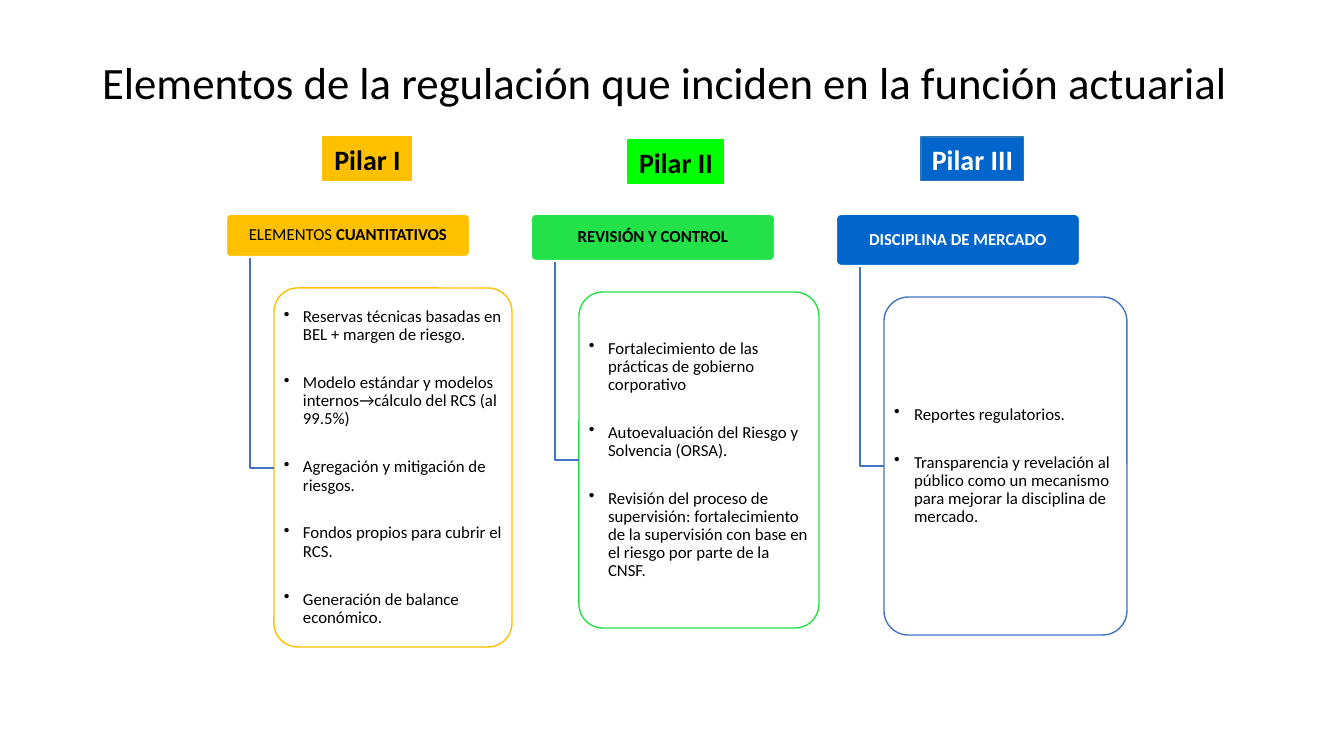
import pptx
import pptx.util
import pptx.dml.color
import pptx.enum.shapes
import pptx.enum.text
from lxml import etree

EMU_PER_PX = 914400 / 100.8
FONT = "Calibri"
SHAPES = pptx.enum.shapes.MSO_SHAPE
ALIGN = pptx.enum.text.PP_ALIGN
MIDDLE = pptx.enum.text.MSO_ANCHOR.MIDDLE


def px(*lengths):
    return [round(length * EMU_PER_PX) for length in lengths]


def color(hex_code):
    return pptx.dml.color.RGBColor.from_string(hex_code)


deck = pptx.Presentation()
deck.slide_width, deck.slide_height = px(1344, 756)
slide = deck.slides.add_slide(deck.slide_layouts[5])

# Title
title = slide.shapes.title
title.left, title.top, title.width, title.height = px(92, 30, 1159, 110)
title.text_frame.text = "Elementos de la regulación que inciden en la función actuarial"
title.text_frame.vertical_anchor = MIDDLE
heading = title.text_frame.paragraphs[0]
heading.alignment = ALIGN.LEFT
heading.line_spacing = 0.9
heading.font.size = pptx.util.Pt(32)
heading.font.name = FONT
heading.font.color.rgb = color("000000")

# The three pillars
pillars = [
    {"tag": "Pilar I", "tag_box": (323, 137, 89, 44), "tag_fill": "FFC000", "tag_line": "FFC000",
     "header": [("ELEMENTOS ", False), ("CUANTITATIVOS", True)], "header_height": 43,
     "header_fill": "FFC000", "ink": "000000",
     "card_size": (238, 359), "card_line": "FFC000", "indent": 19,
     "points": ["Reservas técnicas basadas en BEL + margen de riesgo.",
                "Modelo estándar y modelos internos→cálculo del RCS (al 99.5%)",
                "Agregación y mitigación de riesgos.",
                "Fondos propios para cubrir el RCS.",
                "Generación de balance económico."]},
    {"tag": "Pilar II", "tag_box": (628, 140, 96, 44), "tag_fill": "00FF00", "tag_line": "00FF00",
     "header": [("REVISIÓN Y CONTROL", True)], "header_height": 47,
     "header_fill": "23E148", "ink": "000000",
     "card_size": (240, 336), "card_line": "23E148", "indent": 19,
     "points": ["Fortalecimiento de las prácticas de gobierno corporativo",
                "Autoevaluación del Riesgo y Solvencia (ORSA).",
                "Revisión del proceso de supervisión: fortalecimiento de la supervisión "
                "con base en el riesgo por parte de la CNSF."]},
    {"tag": "Pilar III", "tag_box": (921, 137, 103, 44), "tag_fill": "0066CC", "tag_line": "2E75B6",
     "header": [("DISCIPLINA DE MERCADO", True)], "header_height": 52,
     "header_fill": "0066CC", "ink": "FFFFFF",
     "card_size": (243, 338), "card_line": "4472C4", "indent": 20,
     "points": ["Reportes regulatorios.",
                "Transparencia y revelación al público como un mecanismo para mejorar "
                "la disciplina de mercado."]},
]
HEADER_TOP, HEADER_WIDTH, COLUMN_STEP = 214, 244, 305
STEM_OFFSET, CARD_OFFSET, CARD_GAP = 24, 48, 31

for column, pillar in enumerate(pillars):
    left = 226 + column * COLUMN_STEP
    header_bottom = HEADER_TOP + pillar["header_height"]
    card_left, card_top = left + CARD_OFFSET, header_bottom + CARD_GAP
    card_width, card_height = pillar["card_size"]

    # Header, card and tag
    header = slide.shapes.add_shape(
        SHAPES.ROUNDED_RECTANGLE, *px(left, HEADER_TOP, HEADER_WIDTH, pillar["header_height"]))
    card = slide.shapes.add_shape(
        SHAPES.ROUNDED_RECTANGLE, *px(card_left, card_top, card_width, card_height))
    tag = slide.shapes.add_shape(SHAPES.RECTANGLE, *px(*pillar["tag_box"]))
    for part, fill, line, weight in [
            (header, pillar["header_fill"], "FFFFFF", 1.5),
            (card, "FFFFFF", pillar["card_line"], 1),
            (tag, pillar["tag_fill"], pillar["tag_line"], 0.75)]:
        part.shadow.inherit = False
        part.fill.solid()
        part.fill.fore_color.rgb = color(fill)
        part.line.color.rgb = color(line)
        part.line.width = pptx.util.Pt(weight)
        part.text_frame.vertical_anchor = MIDDLE
    for part in (header, card):
        part.adjustments[0] = 0.1
        frame = part.text_frame
        frame.margin_left, frame.margin_right, frame.margin_top, frame.margin_bottom = px(3, 3, 2, 2)

    # Header text
    label = header.text_frame.paragraphs[0]
    label.alignment = ALIGN.CENTER
    label.line_spacing = 0.9
    for words, bold in pillar["header"]:
        run = label.add_run()
        run.text = words
        run.font.bold = bold

    # Bulleted points
    card.text_frame.text = "\n".join(pillar["points"])
    for number, point in enumerate(card.text_frame.paragraphs):
        properties = point._p.get_or_add_pPr()
        indent, = px(pillar["indent"])
        properties.set("marL", str(indent))
        properties.set("indent", str(-indent))
        bullet = etree.SubElement(properties, pptx.oxml.ns.qn("a:buChar"))
        bullet.set("char", "•")
        point.alignment = ALIGN.LEFT
        point.line_spacing = 0.9
        if number:
            point.space_before = pptx.util.Pt(21.3)

    # Tag text
    tag.text_frame.word_wrap = False
    tag.text_frame.text = pillar["tag"]
    tag.text_frame.paragraphs[0].alignment = ALIGN.CENTER

    for part, size, ink in [(header, 12, pillar["ink"]), (card, 12, "000000"), (tag, 20, pillar["ink"])]:
        for paragraph in part.text_frame.paragraphs:
            paragraph.font.size = pptx.util.Pt(size)
            paragraph.font.name = FONT
            paragraph.font.color.rgb = color(ink)
            if part is tag:
                paragraph.font.bold = True

    # Elbow from header to card
    stem_x, card_middle = left + STEM_OFFSET, card_top + card_height / 2
    outline = slide.shapes.build_freeform(stem_x, header_bottom + 1, scale=EMU_PER_PX)
    outline.add_line_segments([(stem_x, card_middle), (card_left, card_middle)], close=False)
    elbow = outline.convert_to_shape()
    elbow.shadow.inherit = False
    elbow.fill.background()
    elbow.line.color.rgb = color("4472C4")
    elbow.line.width = pptx.util.Pt(1)

deck.save("out.pptx")
